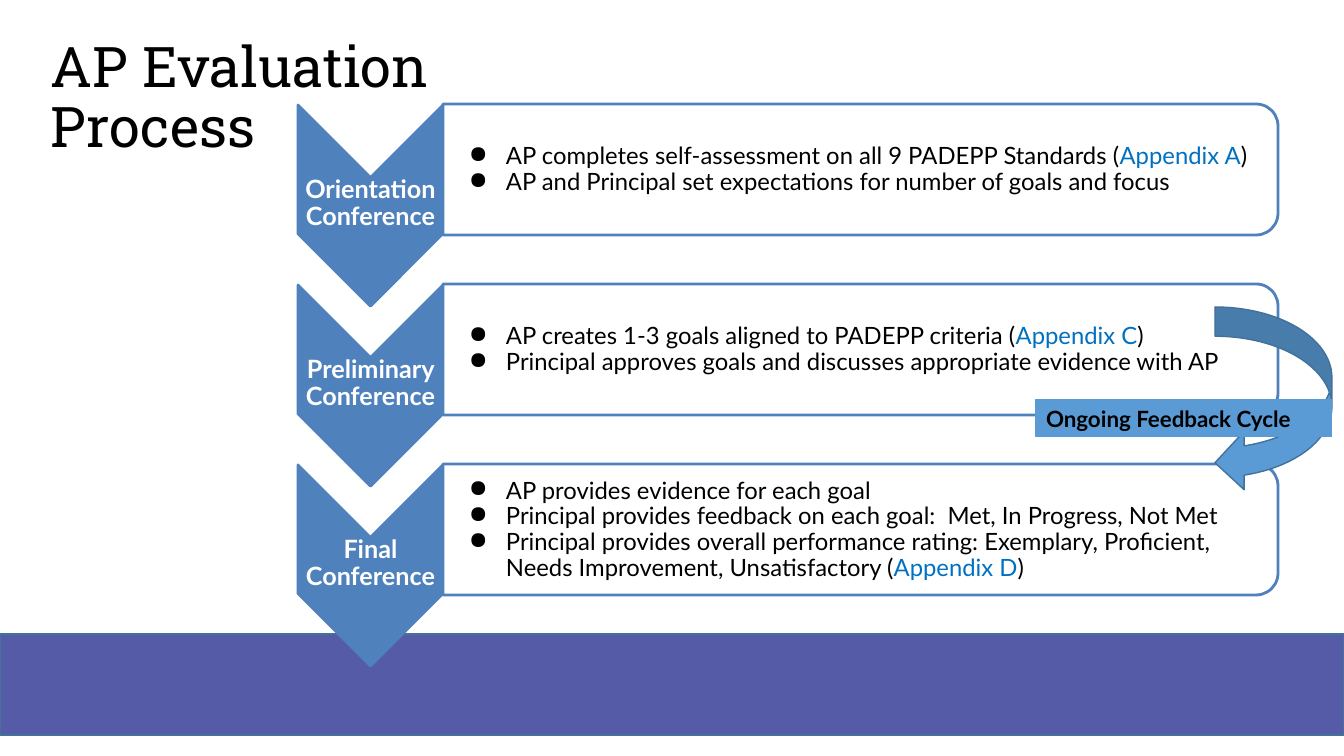
from lxml.etree import SubElement
from pptx import Presentation
from pptx.dml.color import RGBColor
from pptx.enum.shapes import MSO_SHAPE
from pptx.enum.text import MSO_ANCHOR, PP_ALIGN
from pptx.oxml.ns import qn
from pptx.util import Emu, Pt

EMU_PER_PX = 914400 / 100.8
COLORS = {
    "band": "565BA7", "outline": "42719B", "step": "4F81BD", "cycle": "5B9BD5",
    "link": "0070C0", "black": "000000", "white": "FFFFFF",
}
STEP_PITCH = 180
# Each bullet is a list of runs: (text, color name)
STEPS = [
    ("Orientation Conference", [
        [("AP completes self-assessment on all 9 PADEPP Standards (", "black"),
         ("Appendix A", "link"), (")", "black")],
        [("AP and Principal set expectations for number of goals and focus", "black")],
    ]),
    ("Preliminary Conference", [
        [("AP creates 1-3 goals aligned to PADEPP criteria (", "black"),
         ("Appendix C", "link"), (")", "black")],
        [("Principal approves goals and discusses appropriate evidence with AP", "black")],
    ]),
    ("Final Conference", [
        [("AP provides evidence for each goal", "black")],
        [("Principal provides feedback on each goal:  Met, In Progress, Not Met", "black")],
        [("Principal provides overall performance rating: Exemplary, Proficient, "
          "Needs Improvement, Unsatisfactory (", "black"),
         ("Appendix D", "link"), (")", "black")],
    ]),
]


def px(length):
    return Emu(round(length * EMU_PER_PX))


def color(name):
    return RGBColor.from_string(COLORS[name])


def add_preset(slide, kind, left, top, width, height, fill, line, weight, turned=False):
    """Place a preset shape in the box it visibly covers, optionally turned by 90 degrees."""
    if turned:
        left, top = left + (width - height) / 2, top + (height - width) / 2
        width, height = height, width
    shape = slide.shapes.add_shape(kind, px(left), px(top), px(width), px(height))
    shape.rotation = 90 if turned else 0
    shape.shadow.inherit = False
    shape.fill.solid()
    shape.fill.fore_color.rgb = color(fill)
    shape.line.color.rgb = color(line)
    shape.line.width = Pt(weight)
    return shape


def add_bullet(paragraph):
    properties = paragraph._p.get_or_add_pPr()
    properties.set("marL", str(px(50)))
    properties.set("indent", str(px(-37)))
    bullet_color = SubElement(properties, qn("a:buClr"))
    SubElement(bullet_color, qn("a:srgbClr")).set("val", COLORS["black"])
    SubElement(properties, qn("a:buChar")).set("char", "●")


def write_text(shape, paragraphs, font="Lato", size=17, bold=False, align=PP_ALIGN.LEFT,
               anchor=MSO_ANCHOR.MIDDLE, insets=(1, 1, 1, 1), spacing=0.9, bullets=False):
    frame = shape.text_frame
    frame.word_wrap = True
    frame.vertical_anchor = anchor
    frame.margin_left, frame.margin_top, frame.margin_right, frame.margin_bottom = map(px, insets)
    for index, runs in enumerate(paragraphs):
        paragraph = frame.add_paragraph() if index else frame.paragraphs[0]
        paragraph.alignment = align
        paragraph.line_spacing = spacing
        if bullets:
            add_bullet(paragraph)
        for text, color_name in runs:
            for number, line in enumerate(text.split("\v")):
                if number:
                    paragraph.add_line_break()
                run = paragraph.add_run()
                run.text = line
                run.font.name = font
                run.font.size = Pt(size)
                run.font.bold = bold
                run.font.color.rgb = color(color_name)


def add_text(slide, left, top, width, height, paragraphs, **text_format):
    box = slide.shapes.add_textbox(px(left), px(top), px(width), px(height))
    write_text(box, paragraphs, **text_format)


def add_footer_band(slide, left, top, width, height):
    add_preset(slide, MSO_SHAPE.RECTANGLE, left, top, width, height, "band", "outline", 1)


def add_title(slide, left, top, width, height):
    add_text(slide, left, top, width, height, [[("AP Evaluation \vProcess", "black")]],
             font="Roboto Slab", size=40, insets=(10, 5, 10, 5))


def add_step(slide, left, top, width, name, bullets):
    chevron_width = 145
    panel_left, panel_width = left + chevron_width, width - chevron_width
    # Chevron and its label
    add_preset(slide, MSO_SHAPE.CHEVRON, left, top + 1, chevron_width, 201,
               "step", "step", 2, turned=True)
    add_text(slide, left, top + 70, chevron_width, 60, [[(name, "white")]],
             size=18, bold=True, align=PP_ALIGN.CENTER)
    # Panel and its bullets
    panel = add_preset(slide, MSO_SHAPE.ROUND_2_SAME_RECTANGLE, panel_left, top, panel_width, 131,
                       "white", "step", 2, turned=True)
    panel.adjustments[0] = 0.167
    panel.adjustments[1] = 0
    add_text(slide, panel_left, top + 7, panel_width - 7, 118, bullets,
             insets=(13, 1, 1, 1), bullets=True)


def add_feedback_cycle(slide, left, top, width, height):
    arrow_width = 117
    add_preset(slide, MSO_SHAPE.CURVED_LEFT_ARROW, left + width - arrow_width, top,
               arrow_width, height, "cycle", "outline", 1)
    label = add_preset(slide, MSO_SHAPE.RECTANGLE, left, top + height // 2 + 1, width, 37,
                       "cycle", "cycle", 0.75)
    write_text(label, [[("Ongoing Feedback Cycle", "black")]], size=16, bold=True,
               anchor=MSO_ANCHOR.TOP, insets=(10, 5, 10, 5), spacing=1.0)


def main():
    presentation = Presentation()
    presentation.slide_width, presentation.slide_height = px(1344), px(756)
    slide = presentation.slides.add_slide(presentation.slide_layouts[6])
    add_footer_band(slide, 0, 634, 1344, 101)
    add_title(slide, 41, 34, 1210, 131)
    for index, (name, bullets) in enumerate(STEPS):
        add_step(slide, 298, 104 + index * STEP_PITCH, 980, name, bullets)
    add_feedback_cycle(slide, 1036, 307, 296, 185)
    presentation.save("out.pptx")


if __name__ == "__main__":
    main()
